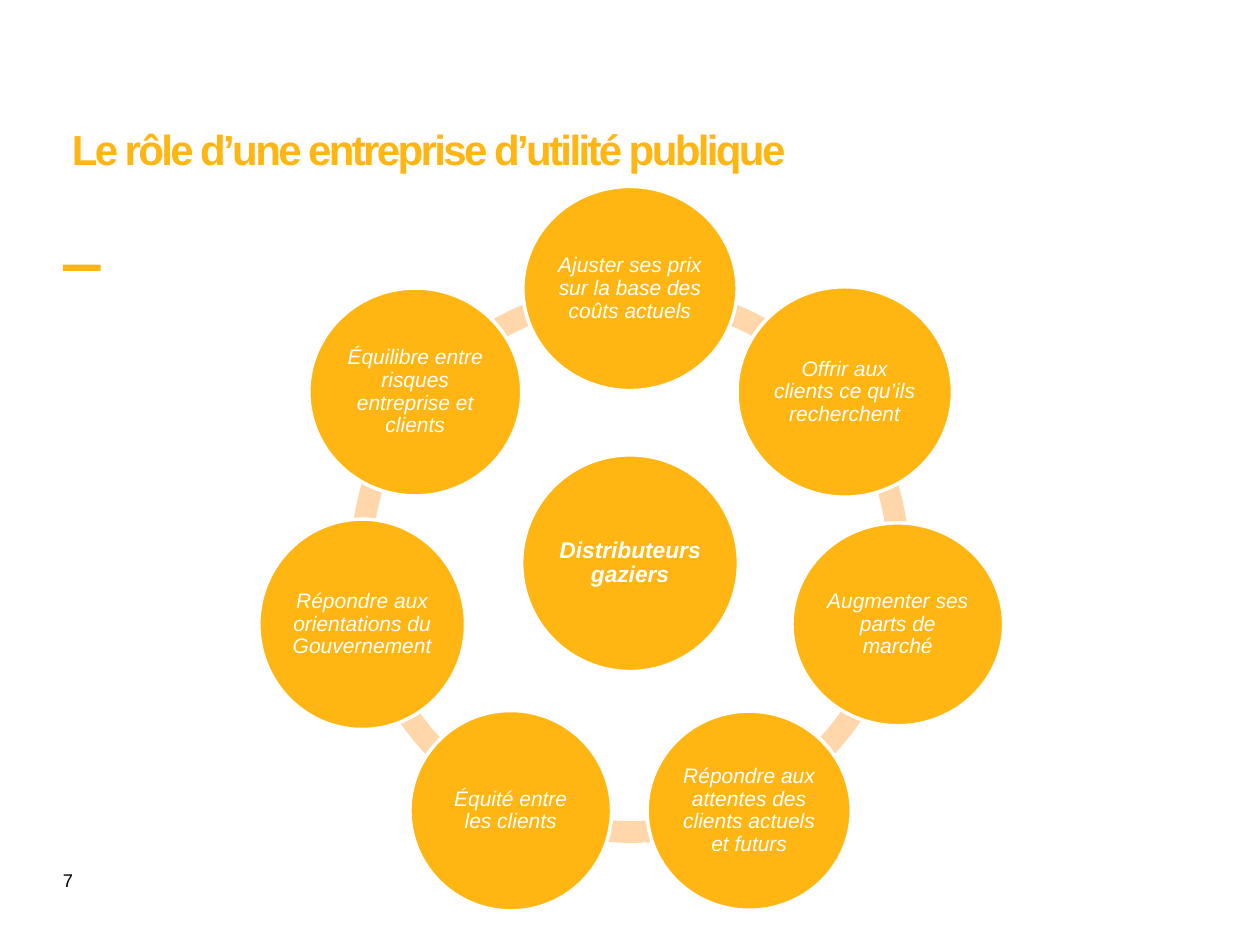
"""Build the slide on the role of a public utility."""
from math import cos, radians, sin

from pptx import Presentation
from pptx.dml.color import RGBColor
from pptx.enum import shapes, text
from pptx.util import Inches, Pt

TITLE = "Le rôle d’une entreprise d’utilité publique"
PAGE = "7"
HUB = ("Distributeurs gaziers", 1.72, 1.72)
ROLES = [
    ("Ajuster ses prix sur la base des coûts actuels", 1.7, 1.62),
    ("Offrir aux clients ce qu’ils recherchent", 1.71, 1.67),
    ("Augmenter ses parts de marché", 1.68, 1.61),
    ("Répondre aux attentes des clients actuels et futurs", 1.62, 1.58),
    ("Équité entre les clients", 1.6, 1.59),
    ("Répondre aux orientations du Gouvernement", 1.64, 1.67),
    ("Équilibre entre risques entreprise et clients", 1.69, 1.65),
]
GOLD, PEACH, WHITE, BLACK = "FFB612", "FFD7AB", "FFFFFF", "000000"
CX, CY, ORBIT, RING = 5, 4.47, 2.18, 4.44
STEP = 360 / len(ROLES)


def rgb(value):
    return RGBColor.from_string(value)


def add_shape(s, kind, x, y, w, h, fill, line=None):
    sp = s.shapes.add_shape(kind, Inches(x), Inches(y), Inches(w), Inches(h))
    sp.shadow.inherit = False
    sp.fill.solid()
    sp.fill.fore_color.rgb = rgb(fill)
    if line:
        sp.line.color.rgb = rgb(line)
        sp.line.width = Pt(2)
    else:
        sp.line.fill.background()
    return sp


def write(tf, words, size, color, bold=False, italic=False):
    tf.word_wrap = True
    p = tf.paragraphs[0]
    r = p.add_run()
    r.text = words
    r.font.name, r.font.size = "Arial", Pt(size)
    r.font.bold, r.font.italic = bold, italic
    r.font.color.rgb = rgb(color)
    return p, r


def add_text(s, x, y, w, h, *args, **kwargs):
    sp = s.shapes.add_textbox(Inches(x), Inches(y), Inches(w), Inches(h))
    return sp.text_frame, write(sp.text_frame, *args, **kwargs)[1]


def add_circle(s, x, y, w, h, words, size, bold=False):
    sp = add_shape(s, shapes.MSO_SHAPE.OVAL, x - w / 2, y - h / 2, w, h, GOLD, WHITE)
    tf = sp.text_frame
    tf.margin_left = tf.margin_right = tf.margin_top = tf.margin_bottom = Inches(0.02)
    tf.vertical_anchor = text.MSO_ANCHOR.MIDDLE
    p, _ = write(tf, words, size, WHITE, bold, True)
    p.alignment = text.PP_ALIGN.CENTER
    p.line_spacing = 0.9


def add_arc(s, start):
    sp = add_shape(s, shapes.MSO_SHAPE.BLOCK_ARC, CX - RING / 2, CY - RING / 2, RING, RING, PEACH)
    sp.adjustments[0] = start % 360 * 0.6
    sp.adjustments[1] = (start + STEP) % 360 * 0.6
    sp.adjustments[2] = 0.039


def main():
    prs = Presentation()
    prs.slide_width, prs.slide_height = Inches(10), Inches(7.5)
    s = prs.slides.add_slide(prs.slide_layouts[6])

    add_text(s, 0.4, 6.85, 0.39, 0.28, PAGE, 10.5, BLACK)
    add_shape(s, shapes.MSO_SHAPE.RECTANGLE, 0.5, 2.1, 0.3, 0.05, GOLD)
    tf, r = add_text(s, 0.57, 0.96, 9, 0.44, TITLE, 24, GOLD, bold=True)
    tf.margin_left = tf.margin_right = 0
    tf.vertical_anchor = text.MSO_ANCHOR.MIDDLE
    r.font._element.set("spc", "-150")

    angles = [270 + i * STEP for i in range(len(ROLES))]
    for angle in angles:
        add_arc(s, angle)
    words, w, h = HUB
    add_circle(s, CX, CY, w, h, words, 13, bold=True)
    for angle, (words, w, h) in zip(angles, ROLES):
        a = radians(angle)
        add_circle(s, CX + ORBIT * cos(a), CY + ORBIT * sin(a), w, h, words, 12)

    prs.save("out.pptx")


if __name__ == "__main__":
    main()
